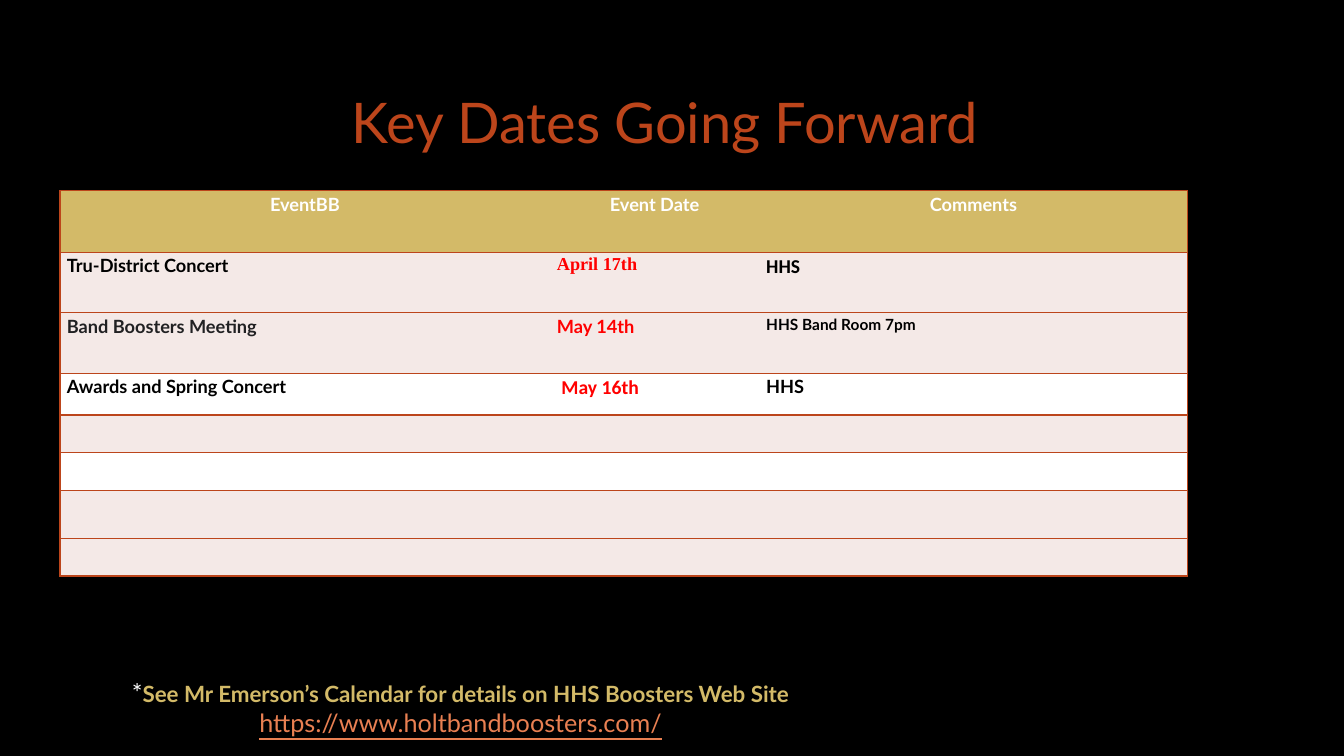
from lxml.etree import SubElement
from pptx import Presentation
from pptx.dml.color import RGBColor
from pptx.enum.text import MSO_ANCHOR, PP_ALIGN
from pptx.oxml.ns import qn
from pptx.util import Pt

BLACK = RGBColor(0x00, 0x00, 0x00)
WHITE = RGBColor(0xFF, 0xFF, 0xFF)
CHARCOAL = RGBColor(0x21, 0x21, 0x23)
RED = RGBColor(0xFF, 0x00, 0x00)
RUST = RGBColor(0xBC, 0x45, 0x1B)
ORANGE = RGBColor(0xE9, 0x80, 0x52)
GOLD = RGBColor(0xD3, 0xBA, 0x68)
BLUSH = RGBColor(0xF4, 0xE9, 0xE7)

TITLE = "Key Dates Going Forward"
NOTE = "See Mr Emerson’s Calendar for details on HHS Boosters Web Site"
ADDRESS = "https://www.holtbandboosters.com/"

COLUMN_WIDTHS = [350, 149.5, 306]
# Each row: height, fill, cells as (text, font, size, colour, left indent)
ROWS = [
    (44, GOLD, [("EventBB", "Lato", 13, WHITE, 0),
                ("Event Date", "Lato", 13, WHITE, 0),
                ("Comments", "Lato", 13, WHITE, 0)]),
    (43.2, BLUSH, [("Tru-District Concert", "Lato", 13, BLACK, 0),
                   ("April 17th", "Times New Roman", 13, RED, 0),
                   ("HHS", "Calibri", 14, BLACK, 0)]),
    (43.2, BLUSH, [("Band Boosters Meeting", "Lato", 13, CHARCOAL, 0),
                   ("May 14th", "Lato", 13, RED, 0),
                   ("HHS Band Room 7pm", "Lato", 11, BLACK, 0)]),
    (29.8, WHITE, [("Awards and Spring Concert", "Lato", 13, BLACK, 0),
                   ("May 16th", "Calibri", 14, RED, 3.2),
                   ("HHS", "Lato", 13, BLACK, 0)]),
    (26.6, BLUSH, []),
    (27.6, WHITE, []),
    (33.8, BLUSH, []),
    (27, BLUSH, []),
]


def set_font(font, name, size, color, bold=False):
    font.name, font.size, font.bold = name, Pt(size), bold
    font.color.rgb = color


def add_borders(cell, sides):
    """Draw 1 pt rust lines on the given sides, before the cell's fill is set."""
    properties = cell._tc.get_or_add_tcPr()
    for side in ("L", "R", "T", "B"):
        line = SubElement(properties, qn(f"a:ln{side}"), w=str(Pt(1)))
        if side in sides:
            fill = SubElement(line, qn("a:solidFill"))
            SubElement(fill, qn("a:srgbClr"), val=str(RUST))
        else:
            SubElement(line, qn("a:noFill"))


def add_title(slide):
    frame = slide.shapes.add_textbox(Pt(72), Pt(48.2), Pt(815), Pt(76.3)).text_frame
    frame.word_wrap = True
    frame.vertical_anchor = MSO_ANCHOR.MIDDLE
    frame.margin_right = Pt(16)
    paragraph = frame.paragraphs[0]
    paragraph.text = TITLE
    paragraph.alignment = PP_ALIGN.CENTER
    set_font(paragraph.font, "Lato", 40, RUST)


def add_footer(slide):
    frame = slide.shapes.add_textbox(Pt(87.1), Pt(480.2), Pt(493.2), Pt(51.1)).text_frame
    frame.word_wrap = False
    note = frame.paragraphs[0]
    for text, size, color, bold in (("*", 18, WHITE, False), (NOTE, 16, GOLD, True)):
        run = note.add_run()
        run.text = text
        set_font(run.font, "Lato", size, color, bold)
    address = frame.add_paragraph()
    address.text = ADDRESS
    address.alignment = PP_ALIGN.CENTER
    set_font(address.font, "Lato", 18, ORANGE)
    address.font.underline = True


def add_dates_table(slide):
    heights = [height for height, _, _ in ROWS]
    frame = slide.shapes.add_table(len(ROWS), len(COLUMN_WIDTHS), Pt(42.8), Pt(136.3),
                                   Pt(sum(COLUMN_WIDTHS)), Pt(sum(heights)))
    table = frame.table
    for column, width in zip(table.columns, COLUMN_WIDTHS):
        column.width = Pt(width)
    last = len(COLUMN_WIDTHS) - 1
    for row_index, (height, fill, contents) in enumerate(ROWS):
        table.rows[row_index].height = Pt(height)
        for column_index in range(len(COLUMN_WIDTHS)):
            cell = table.cell(row_index, column_index)
            sides = "TB" + "L" * (column_index == 0) + "R" * (column_index == last)
            add_borders(cell, sides)
            cell.fill.solid()
            cell.fill.fore_color.rgb = fill
            cell.margin_top, cell.margin_bottom = Pt(0.7), Pt(0)
            cell.margin_right = Pt(5)
            cell.margin_left = Pt(5)
            if not contents:
                continue
            text, font_name, size, color, indent = contents[column_index]
            cell.margin_left = Pt(5 + indent)
            paragraph = cell.text_frame.paragraphs[0]
            paragraph.text = text
            paragraph.line_spacing = 1.06
            paragraph.alignment = PP_ALIGN.CENTER if row_index == 0 else PP_ALIGN.LEFT
            set_font(paragraph.font, font_name, size, color, True)


def main():
    presentation = Presentation()
    presentation.slide_width, presentation.slide_height = Pt(960), Pt(540)
    slide = presentation.slides.add_slide(presentation.slide_layouts[6])
    slide.background.fill.solid()
    slide.background.fill.fore_color.rgb = BLACK
    add_title(slide)
    add_footer(slide)
    add_dates_table(slide)
    presentation.save("out.pptx")


if __name__ == "__main__":
    main()
